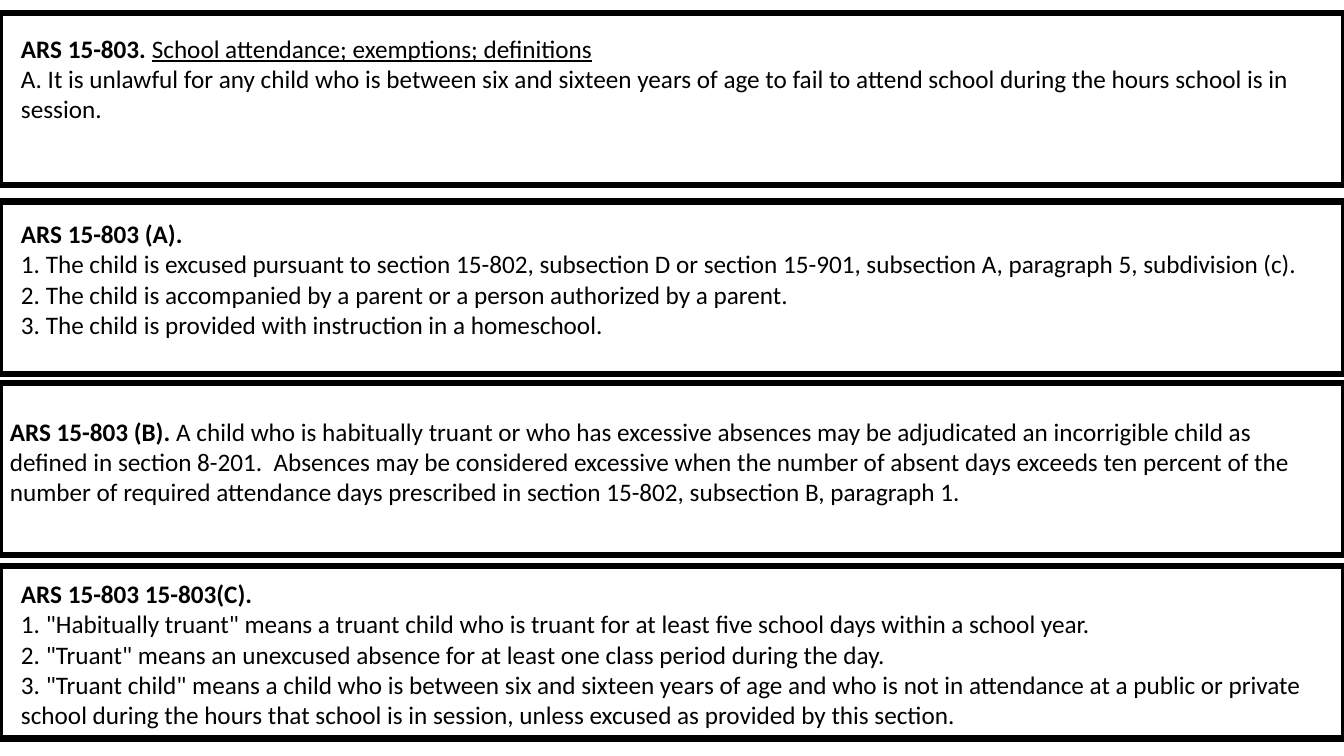
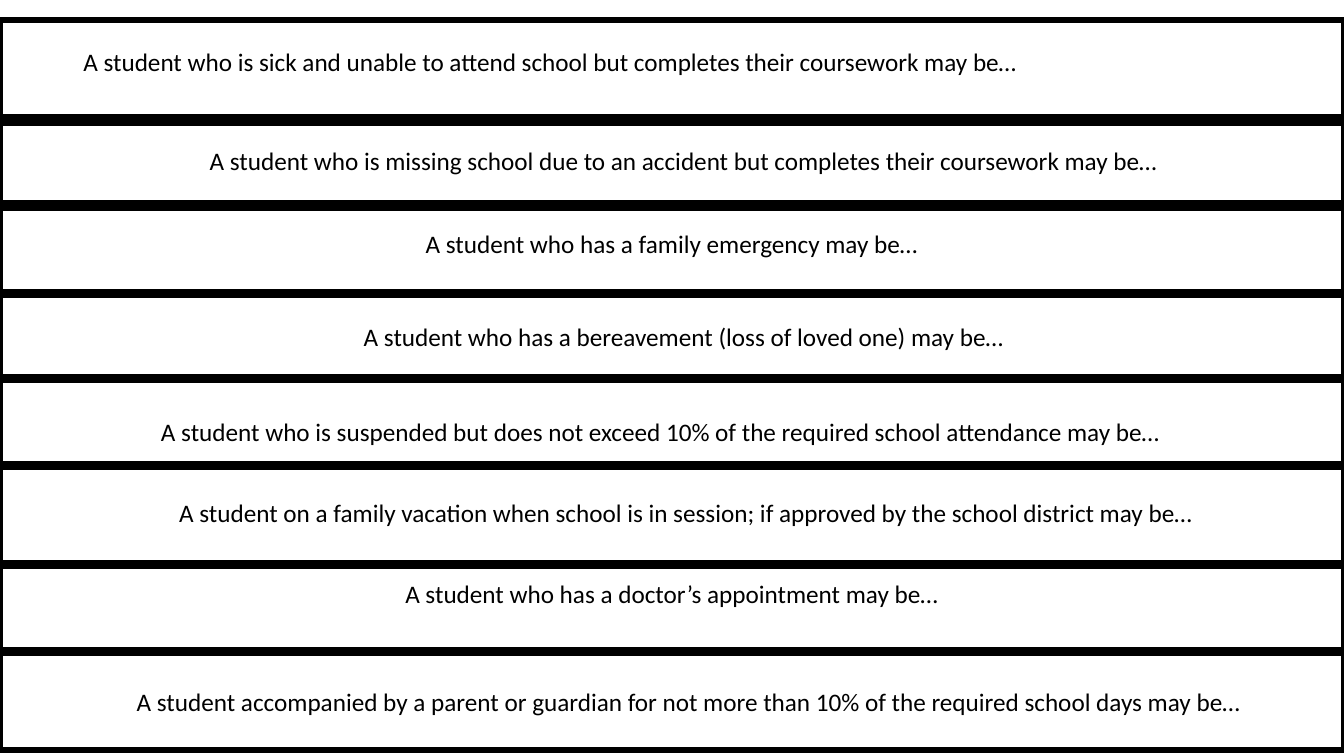
from dataclasses import dataclass

from pptx import Presentation
from pptx.dml.color import RGBColor
from pptx.enum.shapes import MSO_SHAPE
from pptx.enum.text import MSO_AUTO_SIZE, PP_ALIGN
from pptx.util import Cm, Pt

BLACK = RGBColor(0, 0, 0)
WHITE = RGBColor(255, 255, 255)
FONT = "Calibri"
PAGE_WIDTH, PAGE_HEIGHT = Cm(33.87), Cm(19.05)
TEXT_WIDTH = Cm(33.3)
LINE_HEIGHT = Cm(0.76)
TEXT_PADDING = Cm(0.25)
LAW_HEIGHT = 4.34


@dataclass
class Strip:
    """A full-width panel; all lengths in cm, text_left and text_drop from its corner."""
    top: float
    height: float
    text_left: float
    text_drop: float


LAWS = [
    (Strip(0.33, LAW_HEIGHT, 0.28, 0.38), [
        [("ARS 15-803. ", {"bold": True}),
         ("School attendance; exemptions; definitions", {"underline": True})],
        [("A. It is unlawful for any child who is between six and sixteen years of age to fail "
          "to attend school during the hours school is in session.", {})],
    ]),
    (Strip(5.08, LAW_HEIGHT, 0.28, 0.3), [
        [("ARS 15-803 (A).", {"bold": True})],
        [("1. The child is excused pursuant to section 15-802, subsection D or section 15-901, "
          "subsection A, paragraph 5, subdivision (c).", {})],
        [("2. The child is accompanied by a parent or a person authorized by a parent.", {})],
        [("3. The child is provided with instruction in a homeschool.", {})],
    ]),
    (Strip(9.65, LAW_HEIGHT, 0, 0.71), [
        [("ARS 15-803 (B). ", {"bold": True}),
         ("A child who is habitually truant or who has excessive absences may be adjudicated an "
          "incorrigible child as defined in section 8-201.  Absences may be considered excessive "
          "when the number of absent days exceeds ten percent of the number of required "
          "attendance days prescribed in section 15-802, subsection B, paragraph 1.", {})],
    ]),
    (Strip(14.27, LAW_HEIGHT, 0.28, 0.18), [
        [("ARS 15-803 15-803(C).", {"bold": True})],
        [('1. "Habitually truant" means a truant child who is truant for at least five school '
          "days within a school year.", {})],
        [('2. "Truant" means an unexcused absence for at least one class period during the day.',
          {})],
        [('3. "Truant child" means a child who is between six and sixteen years of age and who is '
          "not in attendance at a public or private school during the hours that school is in "
          "session, unless excused as provided by this section.", {})],
    ]),
]

LEFT_INDENTED = {"align": PP_ALIGN.LEFT, "indent": Cm(1.27)}
CENTERED = {"align": PP_ALIGN.CENTER}
SITUATIONS = [
    (Strip(0.51, 2.44, 0.58, 0.53), LEFT_INDENTED,
     "A student who is sick and unable to attend school but completes their coursework may be…"),
    (Strip(3.1, 2.03, 0.58, 0.43), CENTERED,
     "A student who is missing school due to an accident but completes their coursework may be…"),
    (Strip(5.23, 2.13, 0.28, 0.41), CENTERED,
     "A student who has a family emergency may be…"),
    (Strip(7.42, 2.08, 0.58, 0.56), CENTERED,
     "A student who has a bereavement (loss of loved one) may be…"),
    (Strip(9.58, 2.11, 0, 0.79), CENTERED,
     "A student who is suspended but does not exceed 10% of the required school attendance may be…"),
    (Strip(11.76, 2.44, 0.71, 0.64), CENTERED,
     "A student on a family vacation when school is in session; if approved by the school "
     "district may be… "),
    (Strip(14.27, 2.11, 0.28, 0.18), CENTERED,
     "A student who has a doctor’s appointment may be…"),
    (Strip(16.46, 2.44, 0.71, 0.71), CENTERED,
     "A student accompanied by a parent or guardian for not more than 10% of the required school "
     "days may be…"),
]


def add_span(para, text, bold=False, underline=False):
    span = para.add_run()
    span.text = text
    font = span.font
    font.name, font.size, font.color.rgb = FONT, Pt(18), BLACK
    font.bold, font.underline = bold, underline


def add_text(page, left, top, paragraphs, align=PP_ALIGN.LEFT, indent=0):
    """Place paragraphs, each a list of (text, format) spans, in a growing box."""
    height = LINE_HEIGHT * len(paragraphs) + TEXT_PADDING
    frame = page.shapes.add_textbox(left, top, TEXT_WIDTH, height).text_frame
    frame.word_wrap = True
    frame.auto_size = MSO_AUTO_SIZE.SHAPE_TO_FIT_TEXT
    for index, spans in enumerate(paragraphs):
        para = frame.add_paragraph() if index else frame.paragraphs[0]
        para.alignment = align
        if indent:
            para.level = 1
            para._p.get_or_add_pPr().set("marL", str(indent))
        for text, style in spans:
            add_span(para, text, **style)


def add_strip(page, strip, paragraphs, **layout):
    panel = page.shapes.add_shape(
        MSO_SHAPE.RECTANGLE, 0, Cm(strip.top), PAGE_WIDTH, Cm(strip.height))
    panel.shadow.inherit = False
    panel.fill.solid()
    panel.fill.fore_color.rgb = WHITE
    panel.line.color.rgb = BLACK
    panel.line.width = Pt(4.5)
    add_text(page, Cm(strip.text_left), panel.top + Cm(strip.text_drop), paragraphs, **layout)


def build_law_page(page):
    for strip, paragraphs in LAWS:
        add_strip(page, strip, paragraphs)


def build_situation_page(page):
    for strip, layout, text in SITUATIONS:
        add_strip(page, strip, [[(text, {})]], **layout)


def main():
    deck = Presentation()
    deck.slide_width, deck.slide_height = PAGE_WIDTH, PAGE_HEIGHT
    blank = deck.slide_layouts[6]
    for build_page in (build_law_page, build_situation_page):
        build_page(deck.slides.add_slide(blank))
    deck.save("out.pptx")


if __name__ == "__main__":
    main()
